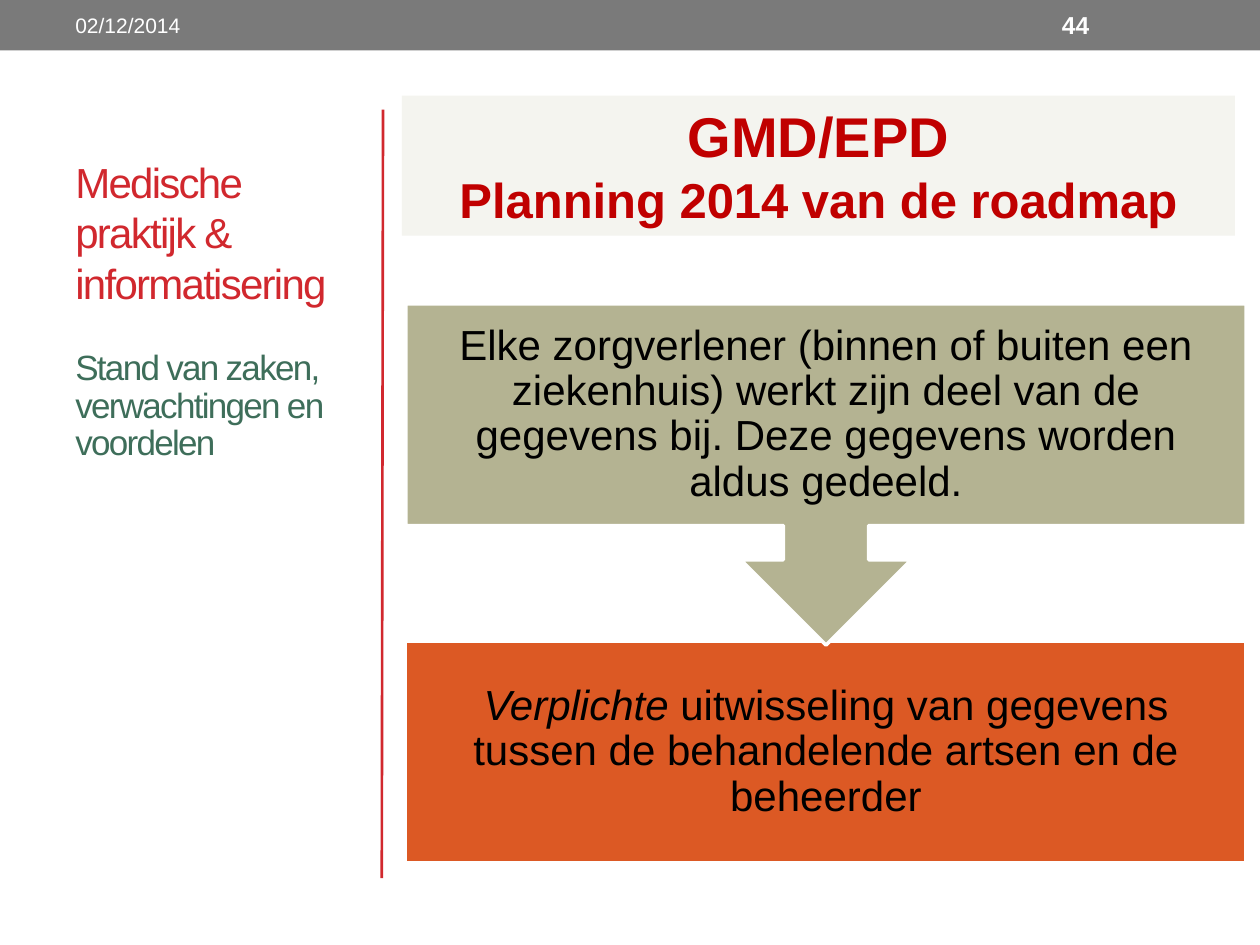
"""Build the roadmap slide: grey header, side title, heading and two linked steps."""
from pptx import Presentation, util as u
from pptx.dml.color import RGBColor
from pptx.enum import shapes, text
from pptx.oxml.ns import qn
from lxml import etree

W, H = 10, 7.5
COLORS = {"bar": "7A7A7A", "red": "D1282E", "green": "3E6E5A", "white": "FFFFFF",
          "orange": "DC5924", "olive": "B4B392", "pale": "F4F4EF",
          "heading": "C00000", "black": "000000"}

MARGIN, BAR_H = 0.5, 0.4
SIDE_W, TOP, BOTTOM = 2.34, 0.87, 6.97
STEP_X, STEP_W, STEP_H = 3.22, 6.67, 1.76
STEP_TOPS = (2.41, 5.09)
CALLOUT_H = 2.71
STEP_INSET = 0.19

HEADER = [
    ((MARGIN, 0.02, 3.17, 0.36), [[("02/12/2014", 12, "white", "")]]),
    ((8.33, 0.02, 1.17, 0.36), [[("44", 14, "white", "b")]]),
]
SIDE = [
    ((MARGIN, TOP, SIDE_W, 1.62), "BOTTOM", None,
     [[("Medische praktijk & informatisering", 24, "red", "")]]),
    ((MARGIN, 2.73, SIDE_W, BOTTOM - 2.73), "TOP", 0.9,
     [[("Stand van zaken, verwachtingen en voordelen", 20, "green", "")]]),
]
HEADING = [[("GMD/EPD", 32, "heading", "b")],
           [("Planning 2014 van de roadmap", 28, "heading", "b")]]
STEPS = [
    [[("Elke zorgverlener (binnen of buiten een ziekenhuis) werkt zijn deel van de "
       "gegevens bij. Deze gegevens worden aldus gedeeld.", 24, "black", "")]],
    [[("Verplichte ", 24, "black", "i"),
      ("uitwisseling van gegevens tussen de behandelende artsen en de beheerder",
       24, "black", "")]],
]


def rgb(name):
    return RGBColor.from_string(COLORS[name])


def inches(box):
    return [u.Inches(v) for v in box]


def write(sp, paragraphs, anchor="MIDDLE", align="LEFT", spacing=None, inset=None, track=0):
    tf = sp.text_frame
    tf.word_wrap = True
    tf.vertical_anchor = getattr(text.MSO_ANCHOR, anchor)
    if inset is not None:
        tf.margin_left = tf.margin_right = tf.margin_top = tf.margin_bottom = u.Inches(inset)
    for i, runs in enumerate(paragraphs):
        p = tf.add_paragraph() if i else tf.paragraphs[0]
        p.alignment = getattr(text.PP_ALIGN, align)
        if spacing:
            p.line_spacing = spacing
        for words, size, color, style in runs:
            r = p.add_run()
            r.text = words
            r.font.name, r.font.size = "Arial", u.Pt(size)
            r.font.color.rgb = rgb(color)
            r.font.bold, r.font.italic = "b" in style, "i" in style
            if track:
                r._r.get_or_add_rPr().set("spc", str(track * 100))


def add_block(s, kind, box, fill, outline=None):
    sp = s.shapes.add_shape(kind, *inches(box))
    sp.shadow.inherit = False
    sp.fill.solid()
    sp.fill.fore_color.rgb = rgb(fill)
    if outline:
        sp.line.color.rgb = rgb(outline)
        sp.line.width = u.Pt(2.08)
    else:
        sp.line.fill.background()
    return sp


def add_text(s, box, paragraphs, **layout):
    write(s.shapes.add_textbox(*inches(box)), paragraphs, **layout)


def main():
    prs = Presentation()
    prs.slide_width, prs.slide_height = inches((W, H))
    s = prs.slides.add_slide(prs.slide_layouts[6])
    rect = shapes.MSO_SHAPE.RECTANGLE

    add_block(s, rect, (0, 0, W, BAR_H), "bar")
    rule = s.shapes.add_connector(shapes.MSO_CONNECTOR.STRAIGHT,
                                  *inches((3.04, TOP, 3.03, BOTTOM)))
    rule.line.color.rgb = rgb("red")
    rule.line.width = u.Pt(1.5)
    etree.SubElement(rule._element.spPr, qn("a:effectLst"))

    for box, anchor, spacing, words in SIDE:
        add_text(s, box, words, anchor=anchor, spacing=spacing, track=-1)

    first, second = STEP_TOPS
    add_block(s, rect, (STEP_X, second, STEP_W, STEP_H), "orange", "white")
    callout = add_block(s, shapes.MSO_SHAPE.UP_ARROW_CALLOUT,
                        (STEP_X, first, STEP_W, CALLOUT_H), "olive", "white")
    callout.rotation = 180
    for top, words in zip(STEP_TOPS, STEPS):
        add_text(s, (STEP_X, top, STEP_W, STEP_H), words,
                 align="CENTER", spacing=0.9, inset=STEP_INSET)

    heading = add_block(s, rect, (3.19, 0.76, 6.61, 1.11), "pale")
    write(heading, HEADING, anchor="TOP", align="CENTER")
    for box, words in HEADER:
        add_text(s, box, words)

    prs.save("out.pptx")


if __name__ == "__main__":
    main()
